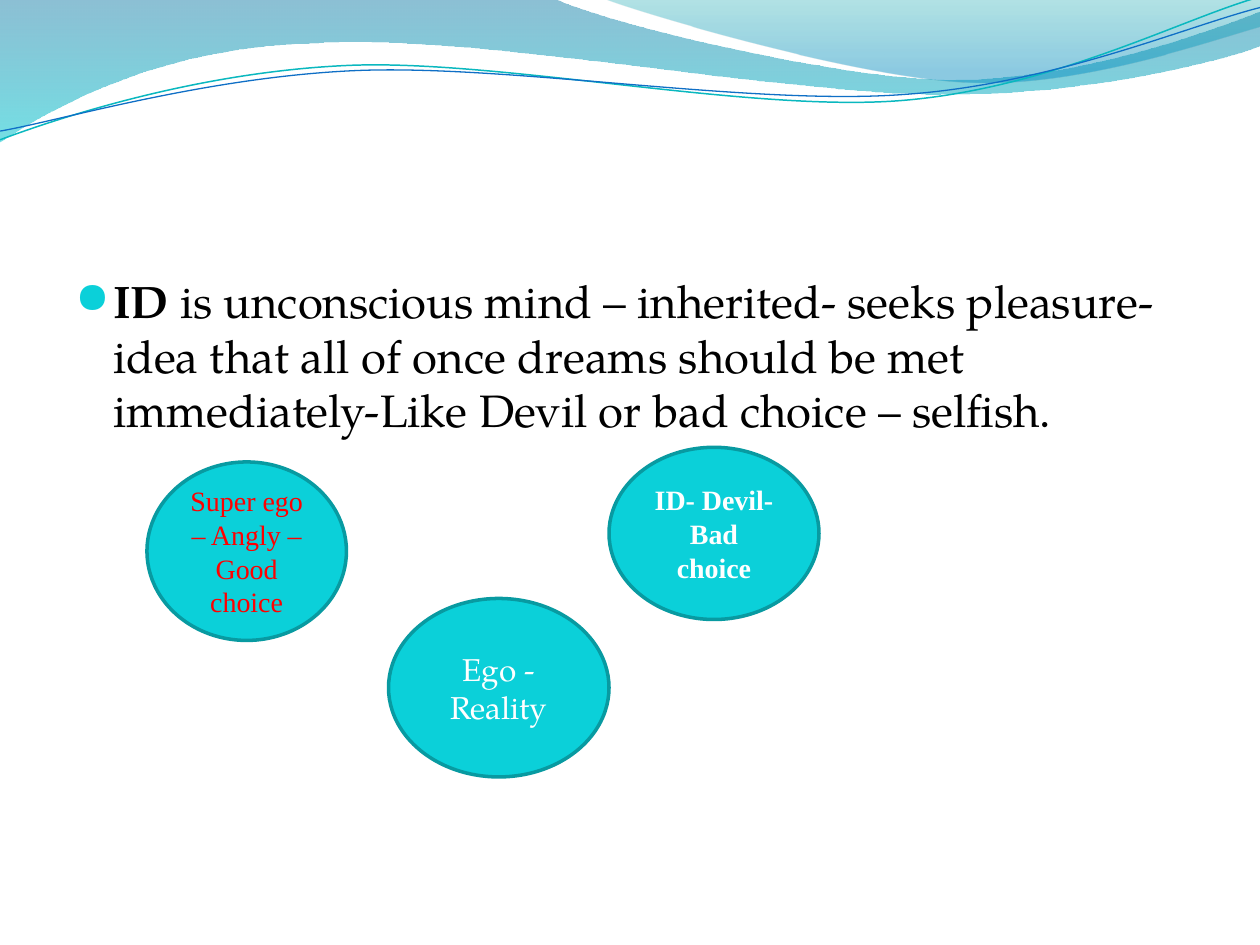
"""Build a slide on the id, ego and super ego under a wave header."""
from dataclasses import dataclass

from pptx import Presentation
from pptx import util as u
from pptx.dml.color import RGBColor
from pptx.enum import shapes, text
from pptx.oxml import parse_xml
from pptx.oxml.ns import nsdecls, qn


@dataclass(frozen=True)
class Theme:
    serif: str = "TeX Gyre Pagella"
    plain: str = "Times New Roman"
    symbol: str = "OpenSymbol"
    body_size: float = 26
    ego_size: float = 18
    choice_size: float = 16
    ink: str = "000000"
    white: str = "FFFFFF"
    red: str = "FF0000"
    accent: str = "0BD0D9"
    accent_edge: str = "089AA1"
    teal_line: str = "0AB8BF"
    blue_line: str = "0F6FC6"
    left_wave: tuple = ((0, "0074A1", 45), (1, "00C6CF", 55))
    right_wave: tuple = ((0, "00A1A9", 30), (0.8, "008BBF", 45))


class SlideBuilder:
    def __init__(self, theme, slide):
        self.theme = theme
        self.slide = slide

    def outline(self, start, segments, close):
        points = [(u.Pt(x), u.Pt(y)) for segment in segments
                  for x, y in zip(segment[::2], segment[1::2])]
        builder = self.slide.shapes.build_freeform(u.Pt(start[0]), u.Pt(start[1]))
        builder.add_line_segments(points, close=close)
        shape = builder.convert_to_shape()
        shape.shadow.inherit = False
        steps = iter(list(shape.element.spPr.iter(qn("a:lnTo"))))
        for segment in segments:
            step = next(steps)
            if len(segment) == 6:
                curve = parse_xml(f'<a:cubicBezTo {nsdecls("a")}/>')
                step.addprevious(curve)
                for corner in (step, next(steps), next(steps)):
                    curve.append(corner[0])
                    corner.getparent().remove(corner)
        return shape

    def wave(self, start, segments, stops):
        shape = self.outline(start, segments, True)
        shape.line.fill.background()
        shape.fill.gradient()
        shape.fill.gradient_angle = 270
        for stop, (position, color, _) in zip(shape.fill.gradient_stops, stops):
            stop.position = position
            stop.color.rgb = RGBColor.from_string(color)
        colors = shape.element.spPr.iter(qn("a:srgbClr"))
        for color, (_, _, opacity) in zip(colors, stops):
            color.append(parse_xml(f'<a:alpha {nsdecls("a")} val="{opacity * 1000}"/>'))

    def ribbon(self, start, segments, color, width):
        shape = self.outline(start, segments, False)
        shape.fill.background()
        shape.line.color.rgb = RGBColor.from_string(color)
        shape.line.width = u.Pt(width)

    def run(self, paragraph, words, size, font, color, bold=False):
        run = paragraph.add_run()
        run.text = words
        run.font.size = u.Pt(size)
        run.font.name = font
        run.font.bold = bold
        run.font.color.rgb = RGBColor.from_string(color)

    def bullet(self, box, runs):
        frame = self.slide.shapes.add_textbox(*map(u.Pt, box)).text_frame
        frame.word_wrap = True
        paragraph = frame.paragraphs[0]
        paragraph.space_before = u.Pt(5.2)
        properties = paragraph._p.get_or_add_pPr()
        properties.set("marL", str(u.Pt(21.6)))
        properties.set("indent", str(u.Pt(-21.6)))
        for mark in (f'<a:buClr {nsdecls("a")}><a:srgbClr val="{self.theme.accent}"/></a:buClr>',
                     f'<a:buSzPct {nsdecls("a")} val="95000"/>',
                     f'<a:buFont {nsdecls("a")} typeface="{self.theme.symbol}"/>',
                     f'<a:buChar {nsdecls("a")} char="●"/>'):
            properties.append(parse_xml(mark))
        for words, bold in runs:
            self.run(paragraph, words, self.theme.body_size, self.theme.serif,
                     self.theme.ink, bold)

    def ellipse(self, box, words, size, font, color, bold=False):
        shape = self.slide.shapes.add_shape(shapes.MSO_SHAPE.OVAL, *map(u.Pt, box))
        shape.shadow.inherit = False
        shape.fill.solid()
        shape.fill.fore_color.rgb = RGBColor.from_string(self.theme.accent)
        shape.line.color.rgb = RGBColor.from_string(self.theme.accent_edge)
        shape.line.width = u.Pt(2)
        frame = shape.text_frame
        frame.word_wrap = True
        frame.vertical_anchor = text.MSO_ANCHOR.MIDDLE
        paragraph = frame.paragraphs[0]
        paragraph.alignment = text.PP_ALIGN.CENTER
        self.run(paragraph, words, size, font, color, bold)


def main():
    presentation = Presentation()
    presentation.slide_width = u.Pt(720)
    presentation.slide_height = u.Pt(540)
    slide = presentation.slides.add_slide(presentation.slide_layouts[6])
    theme = Theme()
    builder = SlideBuilder(theme, slide)

    builder.wave((0, 0), [
        (316.8, -0.7),
        (342.7, 12.2, 478.1, 45.4, 545.8, 45.4),
        (614.2, 45.4, 689.8, 18.7, 720, 6.5),
        (720.7, 25.9),
        (707.8, 31.7, 626.4, 54.7, 537.1, 54),
        (446.4, 54, 275, 20.2, 185, 24.5),
        (92.9, 25.9, 33.1, 59.8, -0.7, 81.4),
    ], theme.left_wave)
    builder.wave((344.9, -0.7), [
        (366.5, 7.9, 491, 44.6, 553.7, 46.8),
        (616.3, 49.7, 691.9, 23, 720, 15.1),
        (720, 0),
    ], theme.right_wave)
    builder.ribbon((0, 79.9), [
        (34.6, 67, 113.8, 41, 199.4, 37.4),
        (284.4, 33.8, 427, 64.1, 513.4, 57.6),
        (599.8, 51.1, 675.4, 10.8, 718.6, -1.4),
    ], theme.teal_line, 0.85)
    builder.ribbon((0, 74.9), [
        (33.8, 69.1, 118.1, 43.9, 203.8, 40.3),
        (290.2, 36.7, 429.8, 60.5, 516.2, 54),
        (601.9, 48.2, 677.5, 15.1, 720, 4.3),
    ], theme.blue_line, 0.75)

    builder.bullet((36, 152.6, 648, 345.6), [
        ("ID", True),
        (" is unconscious mind – inherited- seeks pleasure- idea that all of once dreams "
         "should be met immediately-Like Devil or bad choice – selfish.", False),
    ])
    builder.ellipse((84, 264, 114, 102), "Super ego – Angly – Good choice",
                    theme.choice_size, theme.plain, theme.red)
    builder.ellipse((222, 342, 126, 102), "Ego - Reality",
                    theme.ego_size, theme.serif, theme.white)
    builder.ellipse((348, 255.6, 120, 98.4), "ID- Devil- Bad choice",
                    theme.choice_size, theme.plain, theme.white, True)
    presentation.save("out.pptx")


if __name__ == "__main__":
    main()
